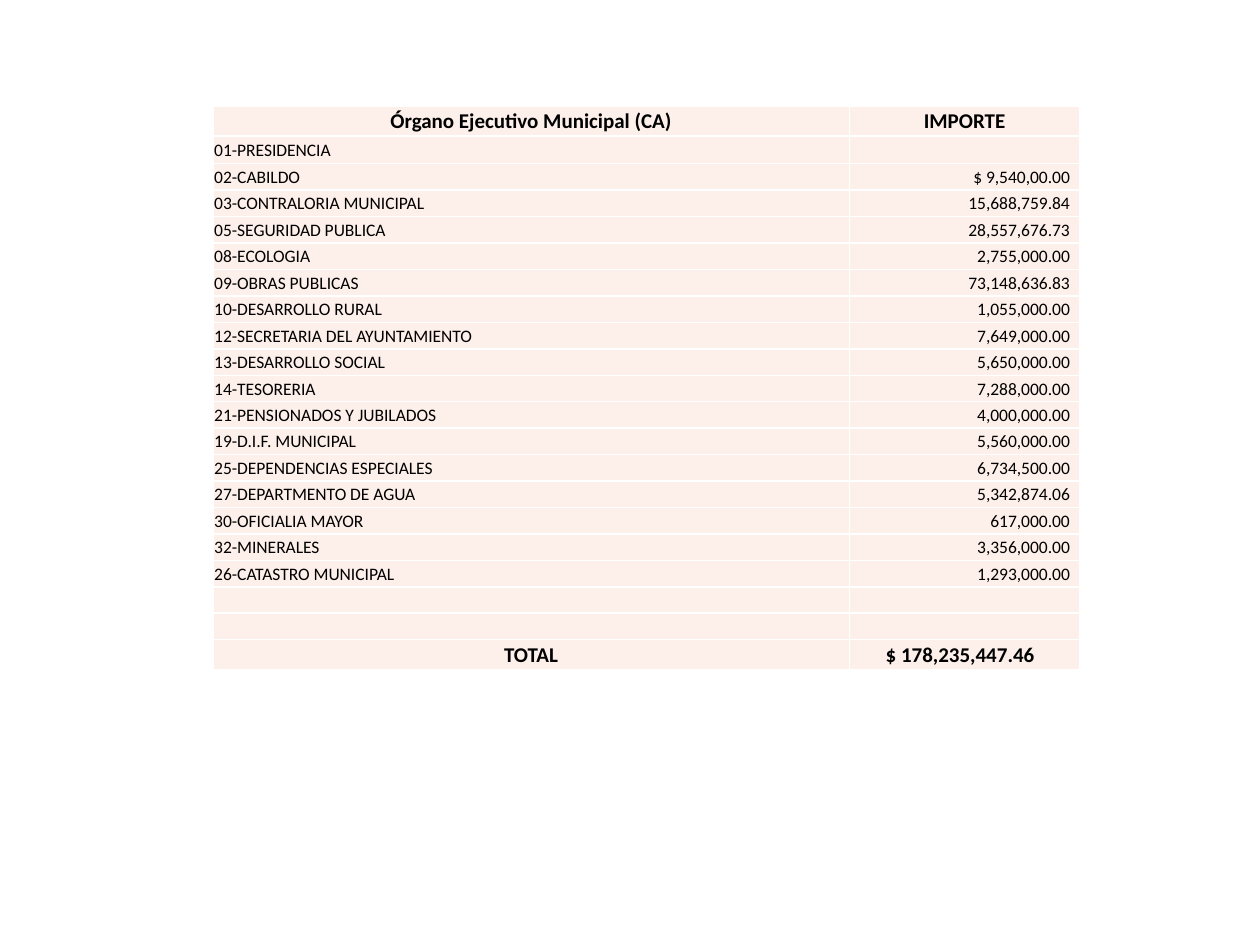
import pptx
import pptx.util
import pptx.dml.color
import pptx.enum.text
import lxml.etree

Inches = pptx.util.Inches
Pt = pptx.util.Pt
ALIGN = pptx.enum.text.PP_ALIGN
NS = "http://schemas.openxmlformats.org/drawingml/2006/main"


def color(code):
    return pptx.dml.color.RGBColor.from_string(code)


def write(cell, text, size=10, bold=False, align=ALIGN.LEFT, right=0.01):
    cell.margin_left = cell.margin_top = Inches(0.01)
    cell.margin_right, cell.margin_bottom = Inches(right), 0
    cell.vertical_anchor = pptx.enum.text.MSO_ANCHOR.MIDDLE
    para = cell.text_frame.paragraphs[0]
    para.alignment = align
    if not text:
        # An empty cell keeps its row low through the end mark's size
        end = lxml.etree.SubElement(para._p, f"{{{NS}}}endParaRPr")
        end.set("sz", str(size * 100))
        return
    run = para.add_run()
    run.text = text
    run.font.name = "Calibri"
    run.font.size = Pt(size)
    run.font.bold = bold
    run.font.color.rgb = color("000000")


items = [
    ("01-PRESIDENCIA", ""),
    ("02-CABILDO", "$ 9,540,00.00"),
    ("03-CONTRALORIA MUNICIPAL", "15,688,759.84"),
    ("05-SEGURIDAD PUBLICA", "28,557,676.73"),
    ("08-ECOLOGIA", "2,755,000.00"),
    ("09-OBRAS PUBLICAS", "73,148,636.83"),
    ("10-DESARROLLO RURAL", "1,055,000.00"),
    ("12-SECRETARIA DEL AYUNTAMIENTO", "7,649,000.00"),
    ("13-DESARROLLO SOCIAL", "5,650,000.00"),
    ("14-TESORERIA", "7,288,000.00"),
    ("21-PENSIONADOS Y JUBILADOS", "4,000,000.00"),
    ("19-D.I.F. MUNICIPAL", "5,560,000.00"),
    ("25-DEPENDENCIAS ESPECIALES", "6,734,500.00"),
    ("27-DEPARTMENTO DE AGUA", "5,342,874.06"),
    ("30-OFICIALIA MAYOR", "617,000.00"),
    ("32-MINERALES", "3,356,000.00"),
    ("26-CATASTRO MUNICIPAL", "1,293,000.00"),
    ("", ""),
    ("", ""),
]
count = len(items) + 2

# Slide
deck = pptx.Presentation()
deck.slide_width, deck.slide_height = Inches(10), Inches(7.5)
slide = deck.slides.add_slide(deck.slide_layouts[6])

# Table grid
table = slide.shapes.add_table(
    count, 2, Inches(1.69), Inches(0.84), Inches(6.88), Inches(4.49)).table
table.first_row = table.horz_banding = False
for col, width in zip(table.columns, (5.05, 1.83)):
    col.width = Inches(width)
heights = [0.24, 0.22] + [0.21] * (count - 3) + [0.24]
for row, height in zip(table.rows, heights):
    row.height = Inches(height)

# White borders and pale fill
for cell in table.iter_cells():
    props = cell._tc.get_or_add_tcPr()
    for side in ("lnL", "lnR", "lnT", "lnB"):
        line = lxml.etree.SubElement(props, f"{{{NS}}}{side}", w=str(Pt(1)))
        fill = lxml.etree.SubElement(line, f"{{{NS}}}solidFill")
        lxml.etree.SubElement(fill, f"{{{NS}}}srgbClr", val="FFFFFF")
    cell.fill.solid()
    cell.fill.fore_color.rgb = color("FDEFE9")

# Heading, items and total
head = dict(size=12, bold=True, align=ALIGN.CENTER)
write(table.cell(0, 0), "Órgano Ejecutivo Municipal (CA)", **head)
write(table.cell(0, 1), "IMPORTE", **head)
for index, (name, amount) in enumerate(items, 1):
    write(table.cell(index, 0), name)
    write(table.cell(index, 1), amount, align=ALIGN.RIGHT, right=0.08)
write(table.cell(count - 1, 0), "TOTAL", **head)
write(table.cell(count - 1, 1), "$ 178,235,447.46", right=0.08, **head)

deck.save("out.pptx")
